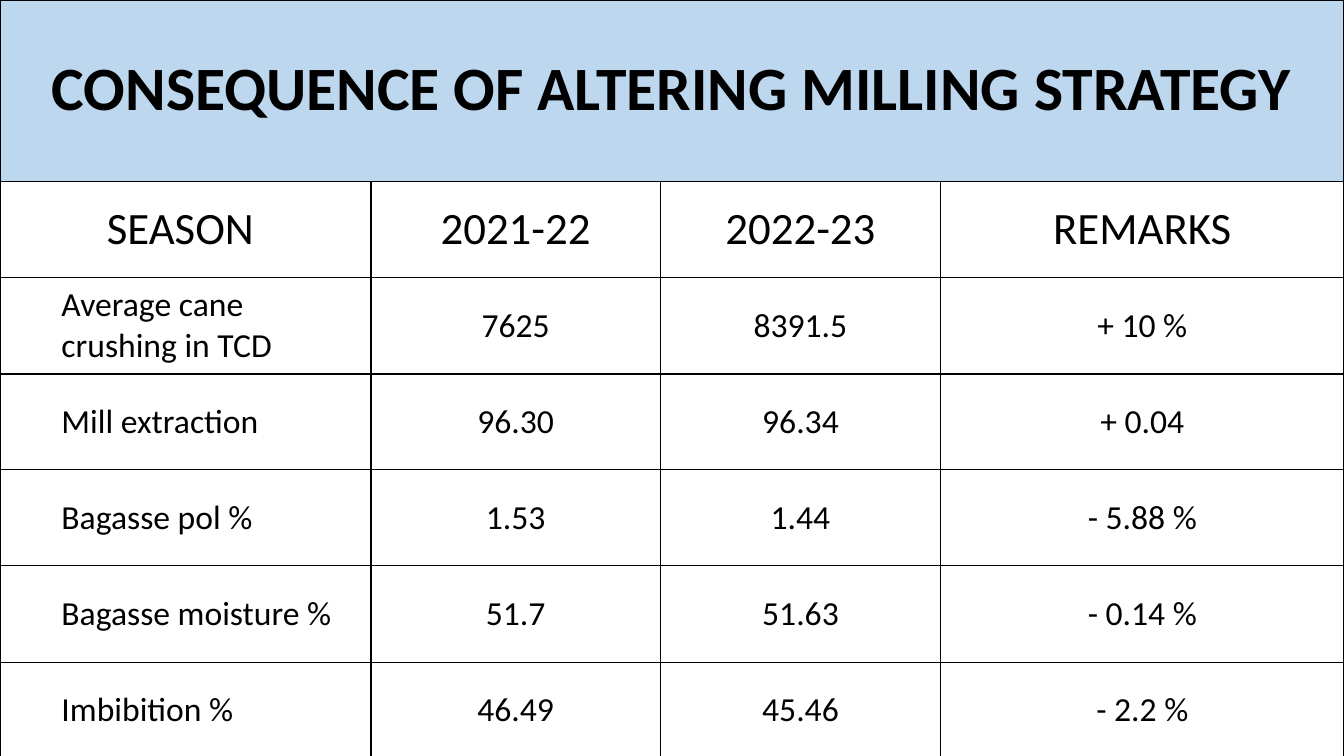
"""Build the slide comparing two milling seasons in a table."""
from lxml import etree
from pptx import Presentation
from pptx.dml.color import RGBColor
from pptx.enum.text import MSO_ANCHOR, PP_ALIGN
from pptx.oxml.ns import qn
from pptx.util import Pt

PX = 9144
W, H, TITLE_H = 1333, 750, 180
CENTER, LEFT = PP_ALIGN.CENTER, PP_ALIGN.LEFT
MIDDLE = MSO_ANCHOR.MIDDLE
COLS = [368, 287, 278, 400]
ROW_HEIGHTS = [95, 96, 95, 95, 96, 95]
LABEL_INDENT = 51
ROWS = [
    ["SEASON ", "2021-22", "2022-23", " REMARKS "],
    ["Average cane crushing in TCD", "7625", "8391.5", "+ 10 %"],
    ["Mill extraction", "96.30", "96.34", "+ 0.04"],
    ["Bagasse pol %", "1.53", "1.44", "- 5.88 %"],
    ["Bagasse moisture %", "51.7", "51.63", "- 0.14 %"],
    ["Imbibition %", "46.49", "45.46", "- 2.2 %"],
]


def color(hex_value):
    return RGBColor.from_string(hex_value)


def set_text(p, text, size, align, bold=False):
    p.text = text
    p.alignment = align
    p.font.name = "Calibri"
    p.font.size = Pt(size)
    p.font.bold = bold
    p.font.color.rgb = color("000000")


prs = Presentation()
prs.slide_width, prs.slide_height = W * PX, H * PX
s = prs.slides.add_slide(prs.slide_layouts[5])

title = s.shapes.title
title.left, title.top, title.width, title.height = 0, 0, W * PX, TITLE_H * PX
title.fill.solid()
title.fill.fore_color.rgb = color("BDD7EE")
title.line.color.rgb = color("000000")
title.line.width = Pt(0.75)
tf = title.text_frame
tf.word_wrap = True
tf.vertical_anchor = MIDDLE
set_text(tf.paragraphs[0], "CONSEQUENCE OF ALTERING MILLING STRATEGY", 44, CENTER, True)
tf.paragraphs[0].line_spacing = 0.9

table = s.shapes.add_table(
    len(ROWS), len(COLS), 0, TITLE_H * PX, W * PX, (H - TITLE_H) * PX).table
table.first_row = False
table.horz_banding = False
for column, width in zip(table.columns, COLS):
    column.width = width * PX
for row, height in zip(table.rows, ROW_HEIGHTS):
    row.height = height * PX

for i, values in enumerate(ROWS):
    for j, text in enumerate(values):
        cell = table.cell(i, j)
        cell.vertical_anchor = MIDDLE
        is_label = i > 0 and j == 0
        p = cell.text_frame.paragraphs[0]
        set_text(p, text, 24 if i else 32, LEFT if is_label else CENTER)
        if is_label:
            p._p.get_or_add_pPr().set("marL", str(LABEL_INDENT * PX))
        tc_pr = cell._tc.get_or_add_tcPr()
        for side in ("a:lnL", "a:lnR", "a:lnT", "a:lnB"):
            ln = etree.SubElement(tc_pr, qn(side), w=str(Pt(1)))
            fill = etree.SubElement(ln, qn("a:solidFill"))
            etree.SubElement(fill, qn("a:srgbClr"), val="000000")
        cell.fill.solid()
        cell.fill.fore_color.rgb = color("FFFFFF")

prs.save("out.pptx")
